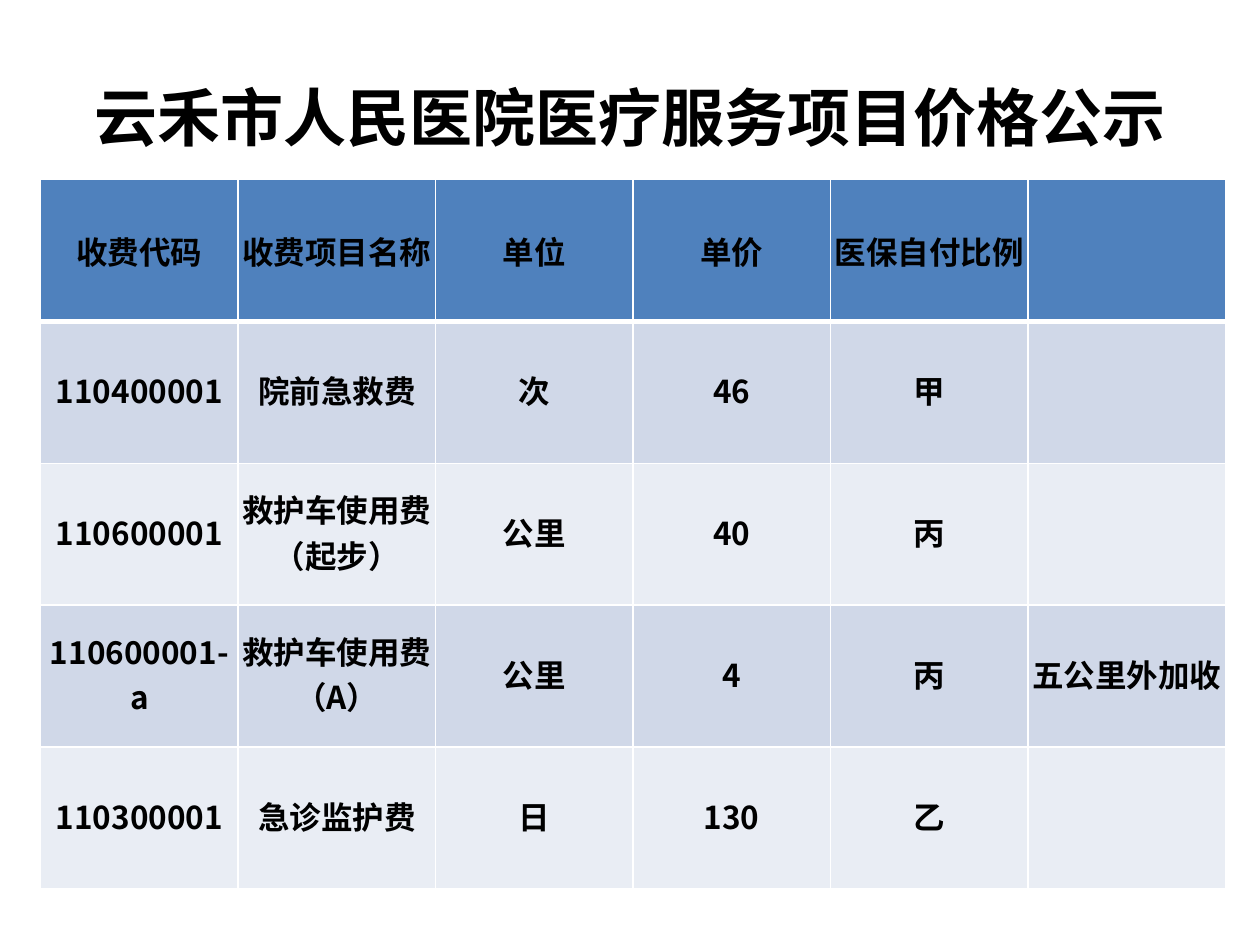
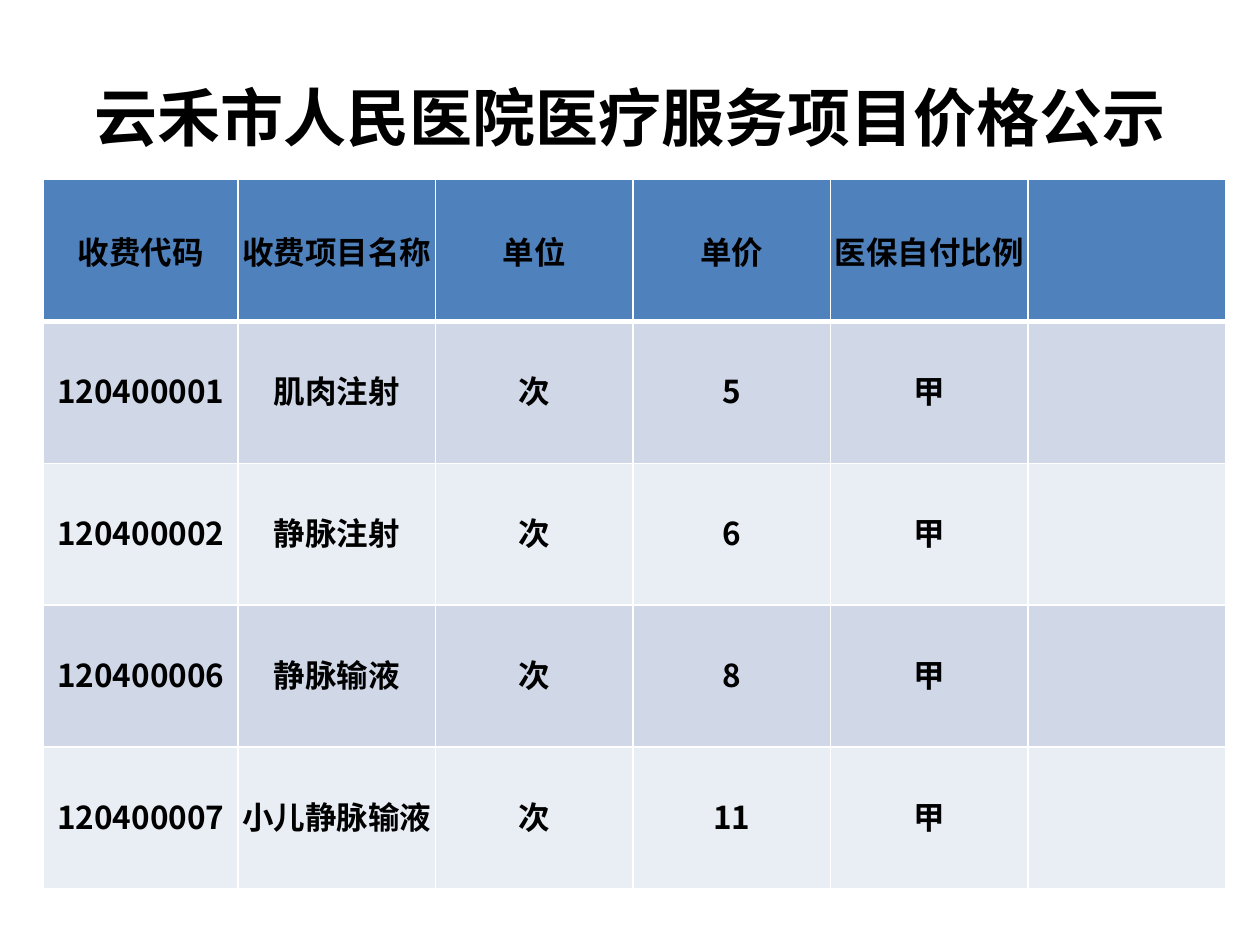
from dataclasses import dataclass

from lxml import etree
from pptx import Presentation
from pptx.dml.color import RGBColor
from pptx.enum.text import MSO_ANCHOR, MSO_AUTO_SIZE, PP_ALIGN
from pptx.oxml.ns import qn
from pptx.util import Cm, Pt

MIDDLE = MSO_ANCHOR.MIDDLE
CENTER = PP_ALIGN.CENTER
NO_FIT = MSO_AUTO_SIZE.NONE

# Shared look
HEAD, DARK, LIGHT = "4F81BD", "D0D8E8", "E9EDF4"
INK, RULE = "000000", "FFFFFF"
LATIN, HAN = "Calibri", "Noto Sans CJK SC"
TITLE = "云禾市人民医院医疗服务项目价格公示"
HEADER = ("收费代码", "收费项目名称", "单位", "单价", "医保自付比例", "")

# Shared grid, in centimetres
TOP, RIGHT = 3.62, 24.7
COL, ROW = 3.98, 2.86
THIN, THICK = 1, 3


@dataclass
class Prices:
    first: float  # width of the code column
    rows: list[tuple[str, ...]]


PAGES = [
    Prices(COL, [
        ("110400001", "院前急救费", "次", "46", "甲", ""),
        ("110600001", "救护车使用费（起步）", "公里", "40", "丙", ""),
        ("110600001-a", "救护车使用费（A）", "公里", "4", "丙", "五公里外加收"),
        ("110300001", "急诊监护费", "日", "130", "乙", ""),
    ]),
    Prices(3.92, [
        ("120400001", "肌肉注射", "次", "5", "甲", ""),
        ("120400002", "静脉注射", "次", "6", "甲", ""),
        ("120400006", "静脉输液", "次", "8", "甲", ""),
        ("120400007", "小儿静脉输液", "次", "11", "甲", ""),
    ]),
]


def color(code: str) -> RGBColor:
    return RGBColor.from_string(code)


def assign(item, values: dict) -> None:
    for name, value in values.items():
        setattr(item, name, value)


def write(frame, text: str, size: float, latin: str) -> None:
    """Put one centred bold line of text into a frame."""
    para = frame.paragraphs[0]
    para.alignment = CENTER
    run = para.add_run()
    run.text = text
    assign(run.font, {"size": Pt(size), "bold": True, "name": latin})
    run.font.color.rgb = color(INK)
    props = run.font._element
    etree.SubElement(props, qn("a:ea")).set("typeface", HAN)


def border(cell, top: float, bottom: float) -> None:
    """Rule all four sides; the lines must precede the fill."""
    props = cell._tc.get_or_add_tcPr()
    sides = {"lnL": THIN, "lnR": THIN, "lnT": top, "lnB": bottom}
    for place, (side, width) in enumerate(sides.items()):
        line = etree.Element(qn(f"a:{side}"), w=str(Pt(width)))
        fill = etree.SubElement(line, qn("a:solidFill"))
        etree.SubElement(fill, qn("a:srgbClr")).set("val", RULE)
        props.insert(place, line)


def add_title(slide) -> None:
    title = slide.shapes.title
    assign(title, {"left": Cm(1.27), "top": Cm(0.76),
                   "width": Cm(22.86), "height": Cm(3.18)})
    frame = title.text_frame
    assign(frame, {"word_wrap": True, "auto_size": NO_FIT,
                   "vertical_anchor": MIDDLE})
    write(frame, TITLE, 36, LATIN)


def add_prices(slide, page: Prices) -> None:
    rows = [HEADER, *page.rows]
    widths = [page.first] + [COL] * (len(HEADER) - 1)
    total = sum(widths)
    table = slide.shapes.add_table(
        len(rows), len(widths), Cm(RIGHT - total), Cm(TOP),
        Cm(total), Cm(ROW * len(rows))).table
    for column, width in zip(table.columns, widths):
        column.width = Cm(width)
    for r, texts in enumerate(rows):
        table.rows[r].height = Cm(ROW)
        shade = HEAD if r == 0 else DARK if r % 2 else LIGHT
        edge = Cm(0.02)
        style = {"vertical_anchor": MIDDLE, "margin_left": edge,
                 "margin_right": edge, "margin_top": edge,
                 "margin_bottom": Cm(0.13 if r else 0)}
        for c, text in enumerate(texts):
            cell = table.cell(r, c)
            assign(cell, style)
            cell.fill.solid()
            cell.fill.fore_color.rgb = color(shade)
            border(cell, THICK if r == 1 else THIN, THIN if r else THICK)
            if text:
                write(cell.text_frame, text, 18, HAN)


def main() -> None:
    deck = Presentation()
    assign(deck, {"slide_width": Cm(25.4), "slide_height": Cm(19.05)})
    layout = deck.slide_layouts.get_by_name("Title Only")
    for page in PAGES:
        slide = deck.slides.add_slide(layout)
        add_title(slide)
        add_prices(slide, page)
    deck.save("out.pptx")


if __name__ == "__main__":
    main()
